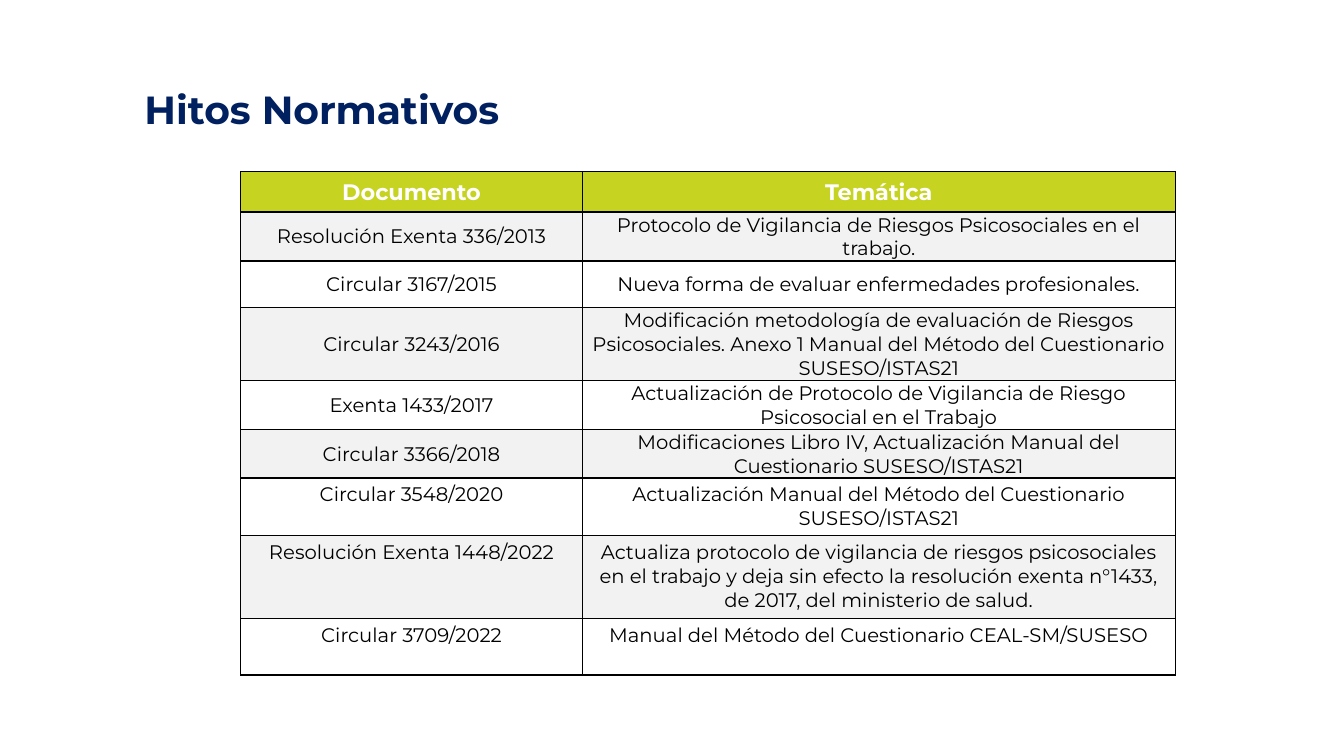
import pptx
import pptx.dml.color
import pptx.enum.text
import pptx.oxml
import pptx.oxml.ns
import pptx.util

Pt = pptx.util.Pt
FONT = "Montserrat"
COLORS = {
    "navy": "002060",
    "lime": "C6D321",
    "white": "FFFFFF",
    "gray": "F2F2F2",
    "black": "000000",
}

HEADER = ("Documento", "Temática")
MILESTONES = [
    ("Resolución Exenta 336/2013",
     "Protocolo de Vigilancia de Riesgos Psicosociales en el trabajo."),
    ("Circular 3167/2015",
     "Nueva forma de evaluar enfermedades profesionales."),
    ("Circular 3243/2016",
     "Modificación metodología de evaluación de Riesgos Psicosociales. "
     "Anexo 1 Manual del Método del Cuestionario SUSESO/ISTAS21"),
    ("Exenta 1433/2017",
     "Actualización de Protocolo de Vigilancia de Riesgo Psicosocial en el Trabajo"),
    ("Circular 3366/2018",
     "Modificaciones Libro IV, Actualización Manual del Cuestionario SUSESO/ISTAS21"),
    ("Circular 3548/2020",
     "Actualización Manual del Método del Cuestionario SUSESO/ISTAS21"),
    ("Resolución Exenta 1448/2022",
     "Actualiza protocolo de vigilancia de riesgos psicosociales en el trabajo "
     "y deja sin efecto la resolución exenta n°1433, de 2017, del ministerio de salud."),
    ("Circular 3709/2022",
     "Manual del Método del Cuestionario CEAL-SM/SUSESO"),
]
COLUMN_WIDTHS = [244, 423.5]
ROW_HEIGHTS = [29, 35, 33.5, 52, 34.5, 34.5, 41, 59, 40.5]
COMPACT_ROWS = 6  # rows with tight margins and centred vertically


def rgb(name):
    return pptx.dml.color.RGBColor.from_string(COLORS[name])


def write_text(text_frame, text, size=14, color="black", bold=False, align="CENTER"):
    paragraph = text_frame.paragraphs[0]
    paragraph.text = text
    paragraph.alignment = getattr(pptx.enum.text.PP_ALIGN, align)
    paragraph.font.name = FONT
    paragraph.font.size = Pt(size)
    paragraph.font.bold = bold
    paragraph.font.color.rgb = rgb(color)


class SlideBuilder:
    def __init__(self, slide, border_color="black", border_width=1):
        self.slide = slide
        self.border_color = border_color
        self.border_width = border_width

    def title(self, text, left, top, width, height):
        shape = self.slide.shapes.title
        shape.left, shape.top = Pt(left), Pt(top)
        shape.width, shape.height = Pt(width), Pt(height)
        shape.text_frame.vertical_anchor = pptx.enum.text.MSO_ANCHOR.MIDDLE
        write_text(shape.text_frame, text, size=28, color="navy", bold=True, align="LEFT")

    def borders(self, cell):
        properties = cell._tc.get_or_add_tcPr()
        for side in ("lnL", "lnR", "lnT", "lnB"):
            properties.append(pptx.oxml.parse_xml(
                f'<a:{side} {pptx.oxml.ns.nsdecls("a")} w="{Pt(self.border_width)}">'
                f'<a:solidFill><a:srgbClr val="{COLORS[self.border_color]}"/></a:solidFill>'
                f'</a:{side}>'))

    def cell(self, cell, text, fill, compact, **text_format):
        self.borders(cell)
        cell.fill.solid()
        cell.fill.fore_color.rgb = rgb(fill)
        if compact:
            cell.vertical_anchor = pptx.enum.text.MSO_ANCHOR.MIDDLE
            cell.margin_left = cell.margin_right = cell.margin_top = Pt(0.7)
            cell.margin_bottom = 0
        write_text(cell.text_frame, text, **text_format)

    def table(self, rows, left, top):
        table = self.slide.shapes.add_table(
            len(rows), len(COLUMN_WIDTHS), Pt(left), Pt(top),
            Pt(sum(COLUMN_WIDTHS)), Pt(sum(ROW_HEIGHTS))).table
        table.horz_banding = False
        for column, width in zip(table.columns, COLUMN_WIDTHS):
            column.width = Pt(width)
        for index, (row, height, texts) in enumerate(zip(table.rows, ROW_HEIGHTS, rows)):
            row.height = Pt(height)
            text_format = {}
            fill = "gray" if index % 2 else "white"
            if index == 0:
                text_format = {"size": 16, "color": "white", "bold": True}
                fill = "lime"
            for cell, text in zip(row.cells, texts):
                self.cell(cell, text, fill, index < COMPACT_ROWS, **text_format)


def main():
    presentation = pptx.Presentation()
    presentation.slide_width = Pt(960)
    presentation.slide_height = Pt(540)
    title_only = presentation.slide_layouts[5]
    builder = SlideBuilder(presentation.slides.add_slide(title_only))

    # Heading
    builder.title("Hitos Normativos", 96, 41, 533, 74)

    # Regulations and their subjects
    builder.table([HEADER] + MILESTONES, 172, 122.4)

    presentation.save("out.pptx")


if __name__ == "__main__":
    main()
